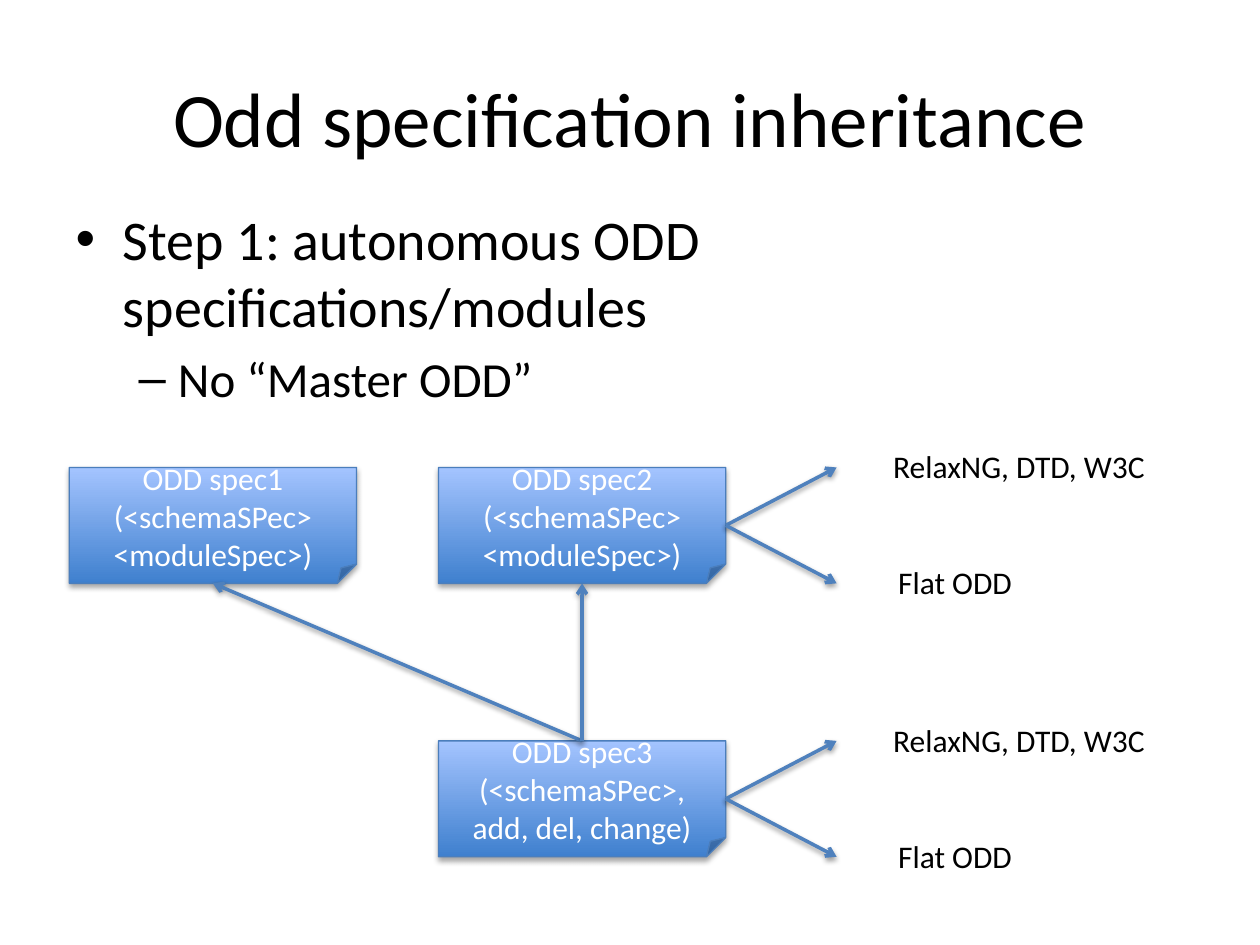
from lxml.etree import SubElement
from pptx import Presentation
from pptx.dml.color import RGBColor
from pptx.enum.shapes import MSO_CONNECTOR, MSO_SHAPE
from pptx.enum.text import MSO_ANCHOR, PP_ALIGN
from pptx.oxml.ns import qn
from pptx.util import Inches, Pt

TOP, LEFT, BOTTOM, RIGHT = range(4)
BOX_W, BOX_H = 2.28, 0.92


def rgb(value):
    return RGBColor.from_string(value)


def add_shadow(effects, alpha, dist):
    shadow = SubElement(effects, qn("a:outerShdw"), blurRad=str(int(Pt(3.15))),
                        dist=str(int(Pt(dist))), dir="5400000", rotWithShape="0")
    color = SubElement(shadow, qn("a:srgbClr"), val="000000")
    SubElement(color, qn("a:alpha"), val=str(alpha * 1000))


class SlideBuilder:
    font = "Calibri"
    black, white = "000000", "FFFFFF"
    gradient = ("3F80CE", "A4C4FF")
    outline, arrow_color = "4B7EBC", "4F81BD"

    def __init__(self, s):
        self.s = s

    def add_lines(self, tf, lines, color, size=18, align=None):
        """Fill a frame, one paragraph per line."""
        for i, line in enumerate(lines):
            p = tf.paragraphs[0] if i == 0 else tf.add_paragraph()
            p.alignment = align
            r = p.add_run()
            r.text = line
            for name, value in {"name": self.font, "size": Pt(size)}.items():
                setattr(r.font, name, value)
            r.font.color.rgb = rgb(color)

    def place(self, sp, left, top, width, height):
        bounds = {"left": left, "top": top, "width": width, "height": height}
        for name, value in bounds.items():
            setattr(sp, name, Inches(value))

    def title(self, text):
        sp = self.s.shapes.title
        self.place(sp, 0.5, 0.3, 9, 1.25)
        sp.text_frame.vertical_anchor = MSO_ANCHOR.MIDDLE
        self.add_lines(sp.text_frame, [text], self.black, 44, PP_ALIGN.CENTER)

    def body(self, items):
        sp = self.s.placeholders[1]
        self.place(sp, 0.5, 1.57, 9, 1.96)
        tf = sp.text_frame
        self.add_lines(tf, [text for text, _, _ in items], self.black)
        for p, (_, level, size) in zip(tf.paragraphs, items):
            p.level = level
            p.runs[0].font.size = Pt(size)

    def box(self, left, top, lines):
        sp = self.s.shapes.add_shape(MSO_SHAPE.FOLDED_CORNER, Inches(left),
                                     Inches(top), Inches(BOX_W), Inches(BOX_H))
        sp.fill.gradient()
        sp.fill.gradient_angle = 90
        for stop, color in zip(sp.fill.gradient_stops, self.gradient):
            stop.color.rgb = rgb(color)
        sp.line.color.rgb = rgb(self.outline)
        sp.line.width = Pt(0.75)
        sp.shadow.inherit = False
        add_shadow(sp._element.spPr.find(qn("a:effectLst")), 35, 1.8)
        sp.text_frame.word_wrap = True
        sp.text_frame.vertical_anchor = MSO_ANCHOR.MIDDLE
        self.add_lines(sp.text_frame, lines, self.white, align=PP_ALIGN.CENTER)
        return sp

    def label(self, left, top, width, text):
        sp = self.s.shapes.add_textbox(Inches(left), Inches(top),
                                       Inches(width), Inches(0.4))
        sp.text_frame.word_wrap = False
        self.add_lines(sp.text_frame, [text], self.black)

    def arrow(self, source, site, target=None, end=(0, 0)):
        """Arrow from a box side to the bottom of a box or to a free point."""
        c = self.s.shapes.add_connector(MSO_CONNECTOR.STRAIGHT, 0, 0,
                                        Inches(end[0]), Inches(end[1]))
        c.begin_connect(source, site)
        if target is not None:
            c.end_connect(target, BOTTOM)
        c.line.color.rgb = rgb(self.arrow_color)
        c.line.width = Pt(2)
        sp_pr = c._element.spPr
        SubElement(sp_pr.find(qn("a:ln")), qn("a:tailEnd"), type="arrow")
        add_shadow(SubElement(sp_pr, qn("a:effectLst")), 38, 1.6)

    def outputs(self, source, top):
        """The two formats generated from a specification."""
        for y, left, width, text in ((top, 6.99, 2.22, "RelaxNG, DTD, W3C"),
                                     (top + BOX_H, 7.03, 1.11, "Flat ODD")):
            self.arrow(source, RIGHT, end=(6.64, y))
            self.label(left, y - 0.21, width, text)


def main():
    prs = Presentation()
    prs.slide_width, prs.slide_height = Inches(10), Inches(7.5)
    b = SlideBuilder(prs.slides.add_slide(prs.slide_layouts[1]))

    # Title and list
    b.title("Odd specification inheritance")
    b.body([("Step 1: autonomous ODD specifications/modules", 0, 32),
            ("No “Master ODD”", 1, 28)])

    # Specifications
    parent_top, child_top = 3.71, 5.88
    parents = [b.box(left, parent_top,
                     [f"ODD spec{n}", "(<schemaSPec>", "<moduleSpec>)"])
               for n, left in enumerate((0.55, 3.48), 1)]
    child = b.box(3.48, child_top,
                  ["ODD spec3", "(<schemaSPec>, add, del, change)"])

    # Generated formats
    b.outputs(parents[1], parent_top)
    b.outputs(child, child_top)

    # Inheritance
    for parent in parents:
        b.arrow(child, TOP, parent)

    prs.save("out.pptx")


if __name__ == "__main__":
    main()
